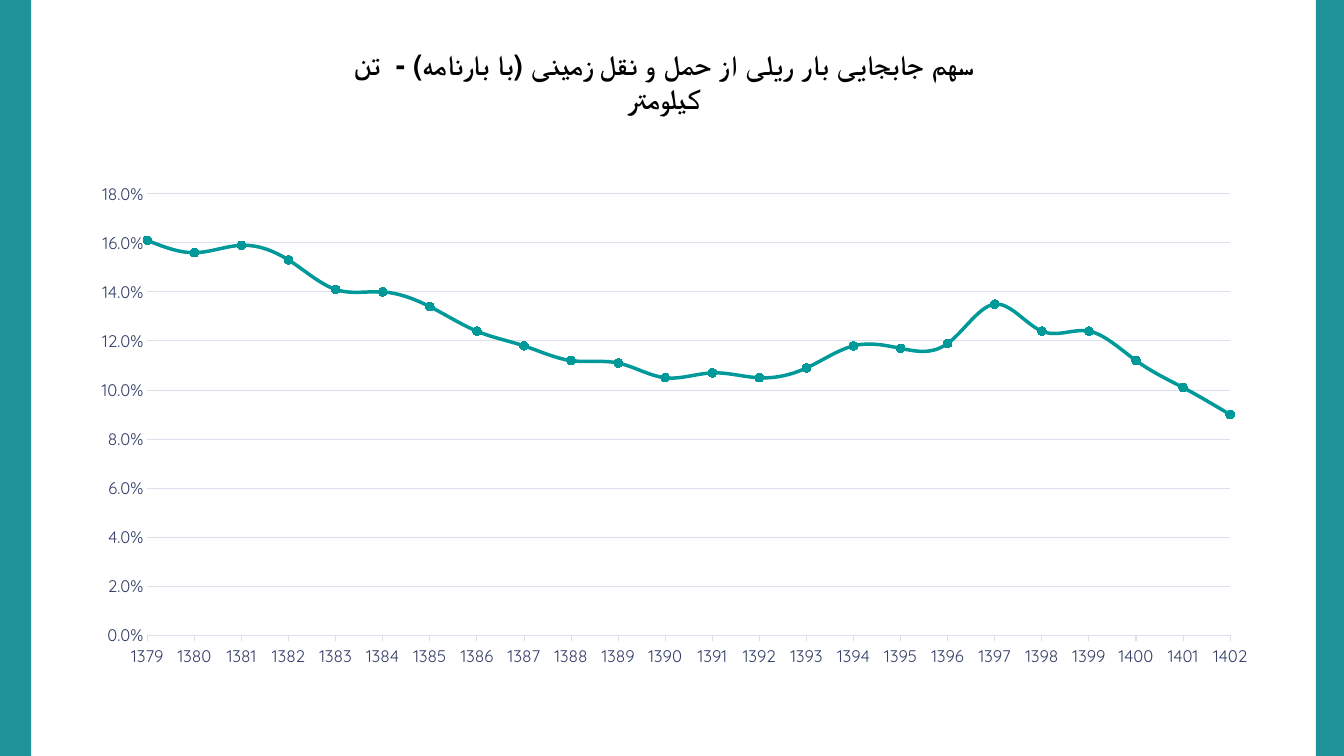
import pptx
import pptx.chart.data
import pptx.dml.color
import pptx.enum.chart
import pptx.enum.shapes
import pptx.enum.text
import pptx.oxml
import pptx.oxml.ns
import pptx.util
from pptx.util import Inches, Pt

TEAL, BAR_TEAL, GRID, LABEL, BLACK = "009999", "1E9399", "DCE0ED", "344068", "000000"
FIRST_YEAR = 1379
RAIL_SHARES = [
    0.161, 0.156, 0.159, 0.153, 0.141, 0.14, 0.134, 0.124,
    0.118, 0.112, 0.111, 0.105, 0.107, 0.105, 0.109, 0.118,
    0.117, 0.119, 0.135, 0.124, 0.124, 0.112, 0.101, 0.09,
]


def rgb(color):
    return pptx.dml.color.RGBColor.from_string(color)


def set_font(font, name, size, color, bold=False):
    font.name, font.size, font.bold = name, Pt(size), bold
    font.color.rgb = rgb(color)


def set_line(line, color, width):
    line.color.rgb = rgb(color)
    line.width = Pt(width)


def add_side_bar(s, left):
    bar = s.shapes.add_shape(pptx.enum.shapes.MSO_SHAPE.RECTANGLE,
                             Inches(left), 0, Inches(0.31), Inches(7.5))
    bar.shadow.inherit = False
    bar.fill.solid()
    bar.fill.fore_color.rgb = rgb(BAR_TEAL)
    bar.line.fill.background()


def set_title(s, text):
    title = s.shapes.title
    title.left, title.top = Inches(3.23), Inches(0.42)
    title.width, title.height = Inches(6.71), Inches(0.44)
    tf = title.text_frame
    tf.text = text
    tf.word_wrap = True
    tf.auto_size = pptx.enum.text.MSO_AUTO_SIZE.SHAPE_TO_FIT_TEXT
    tf.vertical_anchor = pptx.enum.text.MSO_ANCHOR.TOP
    p = tf.paragraphs[0]
    p.alignment = pptx.enum.text.PP_ALIGN.CENTER
    p.space_before = Pt(0)
    set_font(p.font, "Roboto", 20, BLACK, bold=True)
    # Right-to-left text
    p._p.get_or_add_pPr().set("rtl", "1")


def format_axis(axis, low, high, step, number_format, tick):
    axis.minimum_scale, axis.maximum_scale, axis.major_unit = low, high, step
    axis.major_tick_mark = tick
    axis.minor_tick_mark = pptx.enum.chart.XL_TICK_MARK.NONE
    axis.tick_labels.number_format = number_format
    axis.tick_labels.number_format_is_linked = False
    set_font(axis.tick_labels.font, "Quicksand", 12, LABEL)


def set_plot_layout(chart, x, y, w, h):
    area = chart._chartSpace.chart.plotArea
    for old in area.findall(pptx.oxml.ns.qn("c:layout")):
        area.remove(old)
    area.insert(0, pptx.oxml.parse_xml(
        f'<c:layout {pptx.oxml.ns.nsdecls("c")}><c:manualLayout>'
        '<c:layoutTarget val="inner"/><c:xMode val="edge"/><c:yMode val="edge"/>'
        f'<c:x val="{x}"/><c:y val="{y}"/><c:w val="{w}"/><c:h val="{h}"/>'
        '</c:manualLayout></c:layout>'))


def add_share_chart(s):
    data = pptx.chart.data.XyChartData()
    points = data.add_series("Series 1")
    for year, share in enumerate(RAIL_SHARES, FIRST_YEAR):
        points.add_data_point(year, share)
    chart = s.shapes.add_chart(
        pptx.enum.chart.XL_CHART_TYPE.XY_SCATTER_SMOOTH,
        Inches(0.67), Inches(1.75), Inches(12), Inches(4.95), data).chart
    chart.has_title = chart.has_legend = False
    set_font(chart.font, "Quicksand", 10, BLACK)
    chart.plots[0].vary_by_categories = False
    set_plot_layout(chart, 0.066, 0.035, 0.895, 0.885)

    # Axes
    ticks = pptx.enum.chart.XL_TICK_MARK
    years, shares = chart.category_axis, chart.value_axis
    format_axis(years, FIRST_YEAR, FIRST_YEAR + len(RAIL_SHARES) - 1, 1,
                "General", ticks.OUTSIDE)
    format_axis(shares, 0, 0.18, 0.02, "0.0%", ticks.NONE)
    years.has_major_gridlines = False
    set_line(years.format.line, GRID, 0.75)
    shares.has_major_gridlines = True
    set_line(shares.major_gridlines.format.line, GRID, 0.75)
    shares.format.line.fill.background()

    # Curve and markers
    series = chart.plots[0].series[0]
    set_line(series.format.line, TEAL, 2.5)
    # XY series offer no smooth property
    for smooth in series._element.findall(pptx.oxml.ns.qn("c:smooth")):
        smooth.set("val", "1")
    marker = series.marker
    marker.style = pptx.enum.chart.XL_MARKER_STYLE.CIRCLE
    marker.size = 6
    marker.format.fill.solid()
    marker.format.fill.fore_color.rgb = rgb(TEAL)
    set_line(marker.format.line, TEAL, 0.75)


def main():
    prs = pptx.Presentation()
    prs.slide_width, prs.slide_height = Inches(13.33), Inches(7.5)
    s = prs.slides.add_slide(prs.slide_layouts[5])
    for left in (0, 13.05):
        add_side_bar(s, left)
    set_title(s, "سهم جابجايی بار ريلی از حمل و نقل زمینی (با بارنامه) -  تن کیلومتر")
    add_share_chart(s)
    prs.save("out.pptx")


if __name__ == "__main__":
    main()
